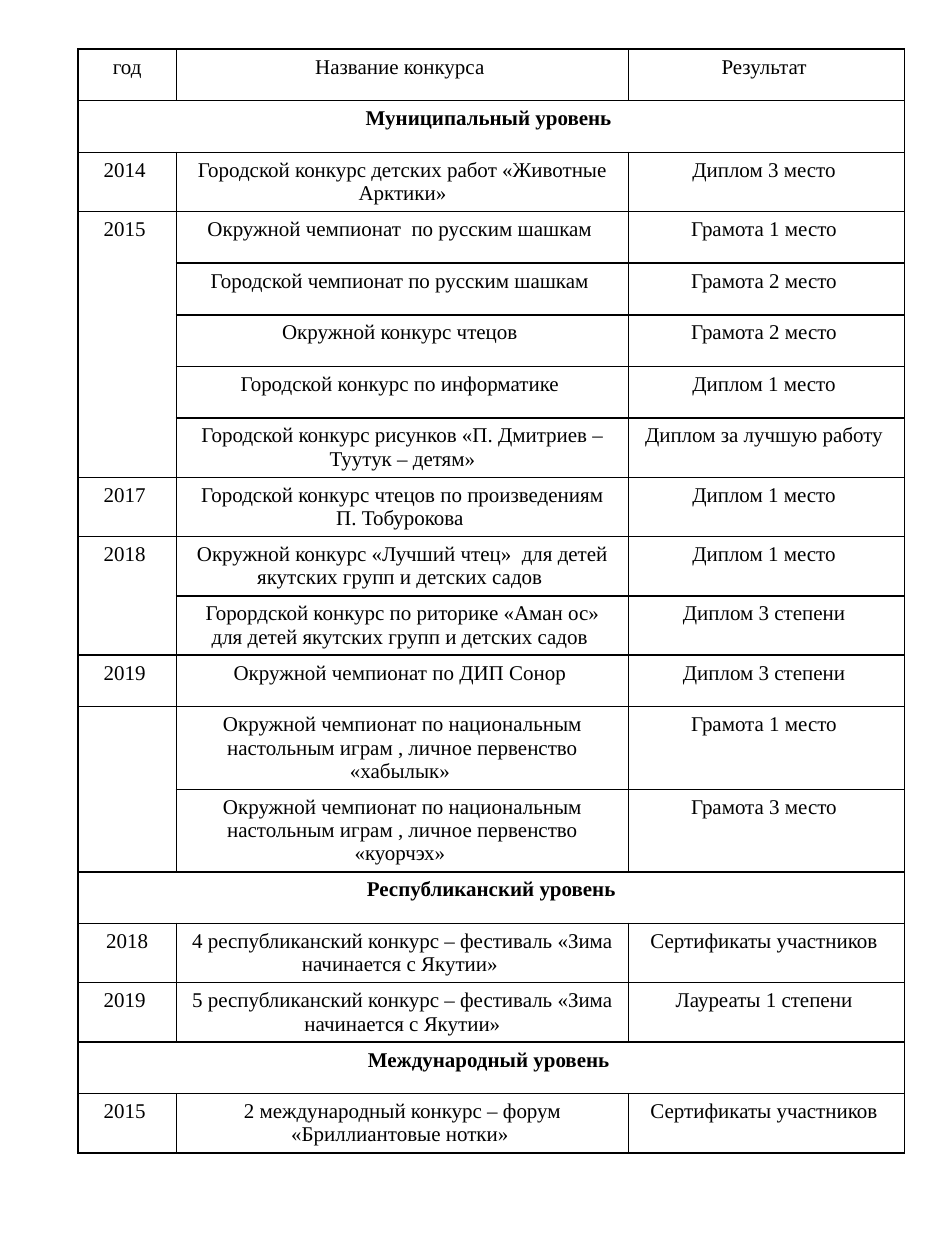
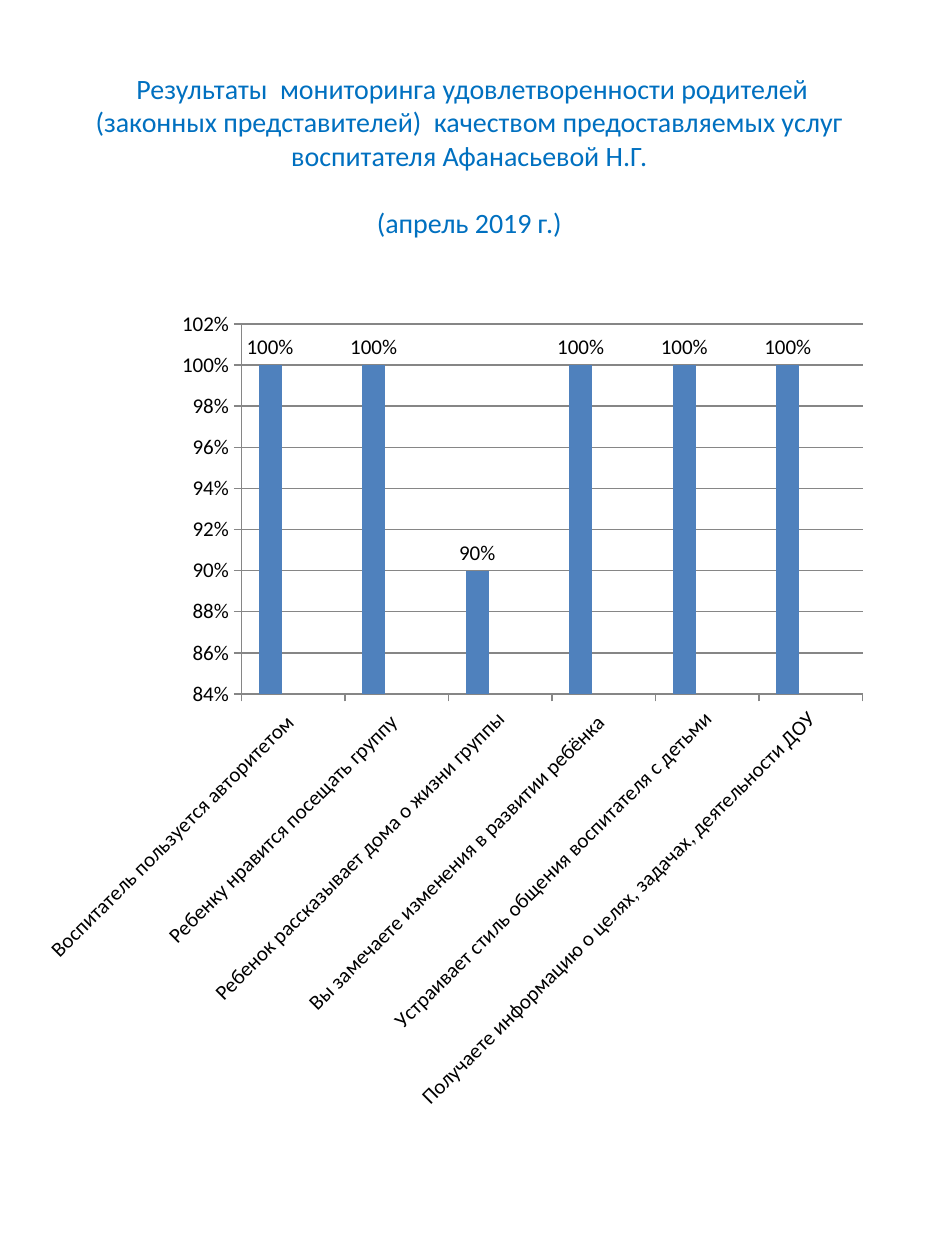
from lxml import etree
from pptx import Presentation
from pptx.chart.data import CategoryChartData
from pptx.dml.color import RGBColor
from pptx.enum.chart import XL_CHART_TYPE, XL_LABEL_POSITION, XL_TICK_MARK
from pptx.enum.text import MSO_ANCHOR, PP_ALIGN
from pptx.oxml.ns import qn
from pptx.util import Pt

CENTER = PP_ALIGN.CENTER
MIDDLE = MSO_ANCHOR.MIDDLE
COLUMNS = XL_CHART_TYPE.COLUMN_CLUSTERED
OUTSIDE_END = XL_LABEL_POSITION.OUTSIDE_END
TICK_OUT = XL_TICK_MARK.OUTSIDE
TITLE_ONLY, BLANK = 5, 6
BLACK, BLUE, GRAY = "000000", "0070C0", "868686"
SERIF, SANS = "Times New Roman", "Calibri"

HEADINGS = ("год", "Название конкурса ", "Результат ")
LEVELS = [
    ("Муниципальный уровень ", [
        ("2014 ", [("Городской конкурс детских работ «Животные Арктики»", "Диплом 3 место ")]),
        ("2015 ", [
            ("Окружной чемпионат  по русским шашкам ", "Грамота 1 место "),
            ("Городской чемпионат по русским шашкам ", "Грамота 2 место "),
            ("Окружной конкурс чтецов ", "Грамота 2 место "),
            ("Городской конкурс по информатике ", "Диплом 1 место "),
            ("Городской конкурс рисунков «П. Дмитриев – Туутук – детям»",
             "Диплом за лучшую работу "),
        ]),
        ("2017 ", [("Городской конкурс чтецов по произведениям П. Тобурокова ",
                    "Диплом 1 место ")]),
        ("2018 ", [
            ("Окружной конкурс «Лучший чтец»  для детей якутских групп и детских садов ",
             "Диплом 1 место "),
            ("Горордской конкурс по риторике «Аман ос» для детей якутских групп и детских садов ",
             "Диплом 3 степени "),
        ]),
        ("2019 ", [("Окружной чемпионат по ДИП Сонор ", "Диплом 3 степени ")]),
        ("", [
            ("Окружной чемпионат по национальным настольным играм , личное первенство «хабылык» ",
             "Грамота 1 место "),
            ("Окружной чемпионат по национальным настольным играм , личное первенство «куорчэх» ",
             "Грамота 3 место "),
        ]),
    ]),
    ("Республиканский уровень", [
        ("2018", [("4 республиканский конкурс – фестиваль «Зима начинается с Якутии» ",
                   "Сертификаты участников ")]),
        ("2019 ", [("5 республиканский конкурс – фестиваль «Зима начинается с Якутии»",
                    "Лауреаты 1 степени ")]),
    ]),
    ("Международный уровень ", [
        ("2015 ", [("2 международный конкурс – форум «Бриллиантовые нотки» ",
                    "Сертификаты участников ")]),
    ]),
]

TITLE = [
    ["Результаты  мониторинга удовлетворенности родителей",
     "(законных представителей)  качеством предоставляемых услуг ",
     "воспитателя Афанасьевой Н.Г. "],
    ["(апрель 2019 г.) "],
]
QUESTIONS = [
    "Воспитатель пользуется авторитетом ",
    "Ребенку нравится посещать группу ",
    "Ребенок рассказывает дома о жизни группы",
    "Вы замечаете изменения в развитии ребёнка ",
    "Устраивает стиль общения воспитателя с детьми",
    "Получаете информацию о целях, задачах, деятельности ДОУ",
]
SERIES = [
    ("Series 1", [1, 1, 0.9, 1, 1, 1], "4F81BD"),
    ("Series 2", [None] * 6, "C0504D"),
    ("Series 3", [None] * 6, "9BBB59"),
]


def rgb(value):
    return RGBColor.from_string(value)


class Deck:
    def __init__(self, width, height):
        self.prs = Presentation()
        self.prs.slide_width, self.prs.slide_height = Pt(width), Pt(height)
        self.s = None

    def slide(self, layout):
        self.s = self.prs.slides.add_slide(self.prs.slide_layouts[layout])

    def font(self, font, size, color=BLACK, name=SANS, bold=False):
        font.size, font.name, font.bold = Pt(size), name, bold
        font.color.rgb = rgb(color)

    def run(self, p, text, size, color, name, bold=False):
        r = p.add_run()
        r.text = text
        self.font(r.font, size, color, name, bold)

    def title(self, paragraphs, x, y, w, h, size=16):
        sp = self.s.shapes.title
        sp.left, sp.top, sp.width, sp.height = Pt(x), Pt(y), Pt(w), Pt(h)
        tf = sp.text_frame
        tf.word_wrap, tf.vertical_anchor = True, MIDDLE
        for i, lines in enumerate(paragraphs):
            p = tf.add_paragraph() if i else tf.paragraphs[0]
            p.alignment = CENTER
            p.space_before = Pt(1.2 * size if i else 0)
            for j, line in enumerate(lines):
                if j:
                    p.add_line_break()
                self.run(p, line, size, BLUE, SANS)

    def border(self, cell, width=1):
        tc_pr = cell._tc.get_or_add_tcPr()
        for i, side in enumerate(("a:lnL", "a:lnR", "a:lnT", "a:lnB")):
            ln = etree.Element(qn(side), w=str(Pt(width)))
            fill = etree.SubElement(ln, qn("a:solidFill"))
            etree.SubElement(fill, qn("a:srgbClr"), val=BLACK)
            tc_pr.insert(i, ln)

    def cell(self, cell, text, bold=False):
        if text:
            p = cell.text_frame.paragraphs[0]
            p.alignment = CENTER
            self.run(p, text, 12, BLACK, SERIF, bold)

    def table(self, rows, x, y, widths, row_height):
        frame = self.s.shapes.add_table(rows, len(widths), Pt(x), Pt(y),
                                        Pt(sum(widths)), Pt(rows * row_height))
        table = frame.table
        table.first_row = table.horz_banding = False
        for column, width in zip(table.columns, widths):
            column.width = Pt(width)
        for row in table.rows:
            row.height = Pt(row_height)
            for cell in row.cells:
                cell.fill.background()
                self.border(cell)
        return table

    def axis(self, axis):
        axis.major_tick_mark = TICK_OUT
        axis.format.line.color.rgb = rgb(GRAY)
        self.font(axis.tick_labels.font, 12)

    def column_chart(self, categories, series, x, y, w, h):
        data = CategoryChartData(number_format="0%")
        data.categories = categories
        for name, values, _ in series:
            data.add_series(name, values)
        chart = self.s.shapes.add_chart(COLUMNS, Pt(x), Pt(y), Pt(w), Pt(h), data).chart
        chart.has_legend = chart.has_title = False
        self.font(chart.font, 18)
        self.axis(chart.category_axis)
        values = chart.value_axis
        self.axis(values)
        values.minimum_scale, values.maximum_scale, values.major_unit = 0.84, 1.02, 0.02
        values.major_gridlines.format.line.color.rgb = rgb(GRAY)
        values.tick_labels.number_format = "0%"
        values.tick_labels.number_format_is_linked = False
        plot = chart.plots[0]
        plot.vary_by_categories, plot.gap_width = False, 150
        for item, (_, _, color) in zip(plot.series, series):
            item.format.fill.solid()
            item.format.fill.fore_color.rgb = rgb(color)
        labels = plot.series[0].data_labels
        labels.show_value, labels.position = True, OUTSIDE_END
        labels.number_format, labels.number_format_is_linked = "0%", False
        self.font(labels.font, 12)


def contests(deck):
    deck.slide(BLANK)
    count = 1 + sum(1 + sum(len(entries) for _, entries in years) for _, years in LEVELS)
    table = deck.table(count, 44.6, 28.1, (56.2, 258.5, 157.7), 29.5)
    for column, heading in enumerate(HEADINGS):
        deck.cell(table.cell(0, column), heading)
    row = 1
    for level, years in LEVELS:
        table.cell(row, 0).merge(table.cell(row, 2))
        deck.cell(table.cell(row, 0), level, bold=True)
        row += 1
        for year, entries in years:
            if len(entries) > 1:
                table.cell(row, 0).merge(table.cell(row + len(entries) - 1, 0))
            deck.cell(table.cell(row, 0), year)
            for contest, result in entries:
                deck.cell(table.cell(row, 1), contest)
                deck.cell(table.cell(row, 2), result)
                row += 1


def survey(deck):
    deck.slide(TITLE_ONLY)
    deck.title(TITLE, 27, 28.8, 486, 120)
    deck.column_chart(QUESTIONS, SERIES, 16.6, 168.5, 486, 475)


def main():
    deck = Deck(540, 720)
    contests(deck)
    survey(deck)
    deck.prs.save("out.pptx")


if __name__ == "__main__":
    main()
